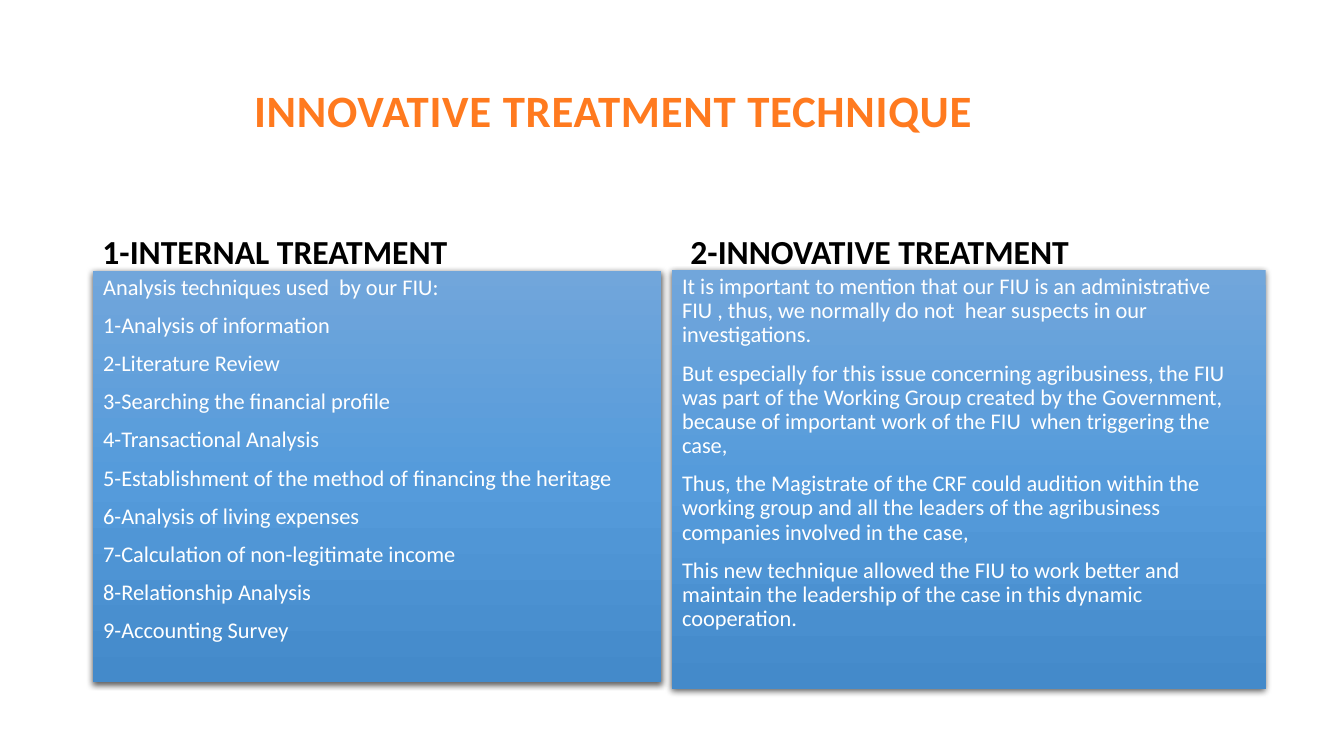
from copy import deepcopy

from lxml.etree import SubElement
from pptx import Presentation
from pptx.dml.color import RGBColor
from pptx.enum.text import MSO_ANCHOR, MSO_AUTO_SIZE, PP_ALIGN
from pptx.oxml.ns import qn
from pptx.util import Pt

INTERNAL_TECHNIQUES = [
    "Analysis of information",
    "Literature Review",
    "Searching the financial profile",
    "Transactional Analysis",
    "Establishment of the method of financing the heritage",
    "Analysis of living expenses",
    "Calculation of non-legitimate income",
    "Relationship Analysis",
    "Accounting Survey",
]
INNOVATIVE_POINTS = [
    "It is important to mention that our FIU is an administrative FIU , thus, "
    "we normally do not  hear suspects in our investigations.",
    "But especially for this issue concerning agribusiness, the FIU was part of "
    "the Working Group created by the Government, because of important work of "
    "the FIU  when triggering the case,",
    "Thus, the Magistrate of the CRF could audition within the working group and "
    "all the leaders of the agribusiness companies involved in the case,",
    "This new technique allowed the FIU to work better and maintain the "
    "leadership of the case in this dynamic cooperation.",
]
PANEL_GRADIENT = [(0, "71A6DB"), (0.5, "559BDB"), (1, "448ACA")]


def paint(color, value):
    color.rgb = RGBColor.from_string(value)


def write(holder, box, lines, size, color, anchor, bold=False):
    holder.left, holder.top, holder.width, holder.height = map(Pt, box)
    frame = holder.text_frame
    frame.text = "\n".join(lines)
    frame.word_wrap = True
    frame.auto_size = MSO_AUTO_SIZE.NONE
    frame.vertical_anchor = anchor
    for position, paragraph in enumerate(frame.paragraphs):
        paragraph.alignment = PP_ALIGN.LEFT
        paragraph.line_spacing = 0.9
        paragraph.space_before = Pt(10 if position else 0)
        paragraph.space_after = Pt(0)
        properties = paragraph._p.get_or_add_pPr()
        properties.set("marL", "0")
        properties.set("indent", "0")
        SubElement(properties, qn("a:buNone"))
        for run in paragraph.runs:
            run.font.name = "Calibri"
            run.font.size = Pt(size)
            run.font.bold = bold
            paint(run.font.color, color)


def add_title(holder, text):
    write(holder, (66, 29, 828, 104), [text], 32, "FF7A1F", MSO_ANCHOR.MIDDLE, True)
    holder.text_frame.margin_left = Pt(115.5)
    run = holder.text_frame.paragraphs[0].runs[0]
    run.font._element.set("spc", "50")


def add_heading(holder, box, text):
    write(holder, box, [text], 24, "000000", MSO_ANCHOR.BOTTOM, True)


def add_panel(holder, box, lines):
    write(holder, box, lines, 16, "FFFFFF", MSO_ANCHOR.TOP)
    holder.fill.gradient()
    holder.fill.gradient_angle = 270
    properties = holder._element.spPr
    stops = properties.find(qn("a:gradFill")).find(qn("a:gsLst"))
    stops.insert(1, deepcopy(stops[0]))
    for stop, (position, color) in zip(holder.fill.gradient_stops, PANEL_GRADIENT):
        stop.position = position
        paint(stop.color, color)
    effects = SubElement(properties, qn("a:effectLst"))
    shadow = SubElement(effects, qn("a:outerShdw"), blurRad=str(Pt(4.5)),
                        dist=str(Pt(1.5)), dir="5400000", algn="ctr", rotWithShape="0")
    shade = SubElement(shadow, qn("a:srgbClr"), val="000000")
    SubElement(shade, qn("a:alpha"), val="63000")


def main():
    deck = Presentation()
    deck.slide_width, deck.slide_height = Pt(960), Pt(540)
    slide = deck.slides.add_slide(deck.slide_layouts.get_by_name("Comparison"))
    title, internal_head, internal, innovative_head, innovative = slide.placeholders

    add_title(title, "INNOVATIVE TREATMENT TECHNIQUE")
    add_heading(internal_head, (66, 132.5, 406, 65), "1-INTERNAL TREATMENT")
    techniques = [f"{number}-{name}" for number, name in enumerate(INTERNAL_TECHNIQUES, 1)]
    add_panel(internal, (66.5, 193.5, 406, 294),
              ["Analysis techniques used  by our FIU:"] + techniques)
    add_heading(innovative_head, (486, 132.5, 408, 65), "2-INNOVATIVE TREATMENT")
    add_panel(innovative, (480, 193, 424, 299), INNOVATIVE_POINTS)

    deck.save("out.pptx")


if __name__ == "__main__":
    main()
